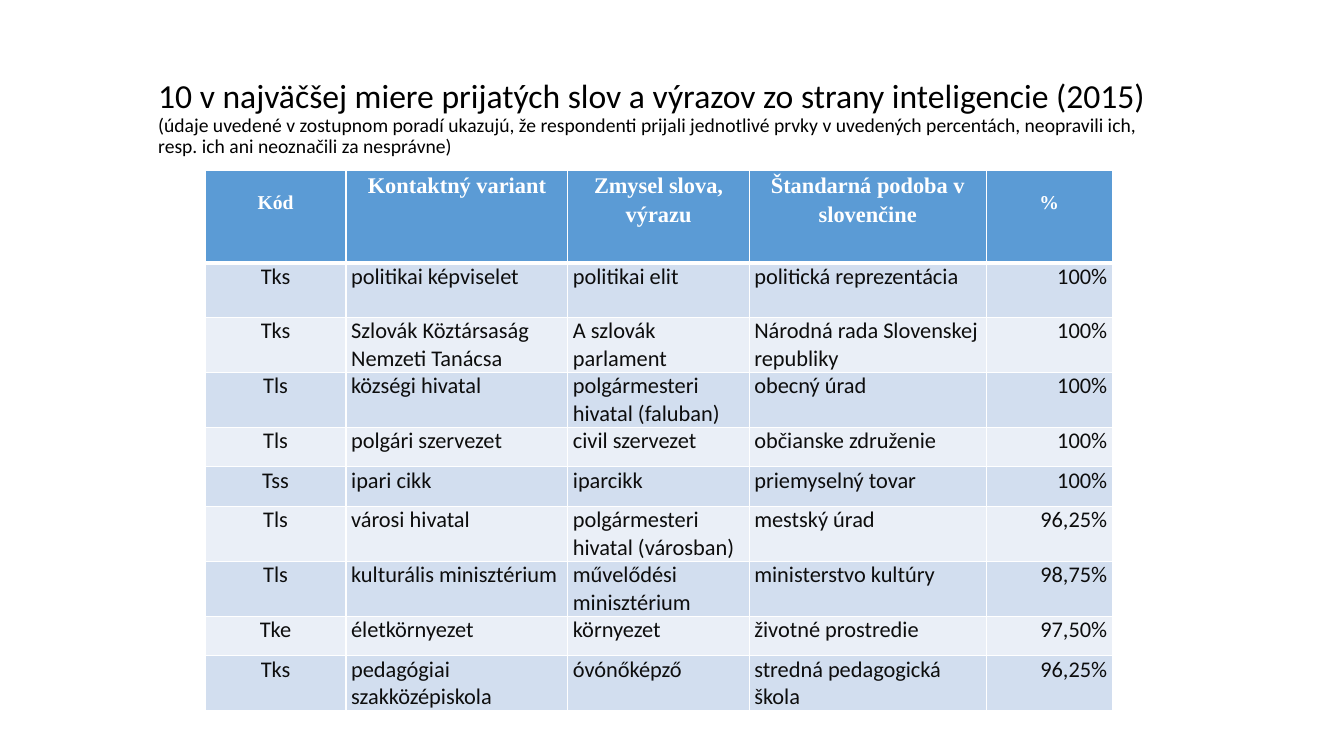
from lxml.etree import SubElement
from pptx import Presentation
from pptx.dml.color import RGBColor
from pptx.enum.text import MSO_ANCHOR, MSO_AUTO_SIZE, PP_ALIGN
from pptx.oxml.ns import qn
from pptx.util import Pt

HEADING = "10 v najväčšej miere prijatých slov a výrazov zo strany inteligencie (2015) "
EXPLANATION = (
    "(údaje uvedené v zostupnom poradí ukazujú, že respondenti prijali jednotlivé prvky "
    "v uvedených percentách, neopravili ich, \vresp. ich ani neoznačili za nesprávne)"
)
COLUMNS = [
    ("Kód", 100.8, PP_ALIGN.CENTER),
    ("Kontaktný variant", 158.4, PP_ALIGN.LEFT),
    ("Zmysel slova, výrazu", 129.6, PP_ALIGN.LEFT),
    ("Štandarná podoba v slovenčine", 169.2, PP_ALIGN.LEFT),
    ("%", 90, PP_ALIGN.RIGHT),
]
SHORT_HEADERS = ("Kód", "%")
HEADER_HEIGHT, TALL, LOW = 66.3, 39.2, 28.3
WORDS = [
    (TALL, "Tks", "politikai képviselet", "politikai elit", "politická reprezentácia", "100%"),
    (TALL, "Tks", "Szlovák Köztársaság Nemzeti Tanácsa", "A szlovák parlament",
     "Národná rada Slovenskej republiky", "100%"),
    (TALL, "Tls", "községi hivatal", "polgármesteri hivatal (faluban)", "obecný úrad", "100%"),
    (LOW, "Tls", "polgári szervezet", "civil szervezet", "občianske združenie", "100%"),
    (LOW, "Tss", "ipari cikk", "iparcikk", "priemyselný tovar", "100%"),
    (TALL, "Tls", "városi hivatal", "polgármesteri hivatal (városban)", "mestský úrad", "96,25%"),
    (TALL, "Tls", "kulturális minisztérium", "művelődési minisztérium",
     "ministerstvo kultúry", "98,75%"),
    (LOW, "Tke", "életkörnyezet", "környezet", "životné prostredie", "97,50%"),
    (TALL, "Tks", "pedagógiai szakközépiskola", "óvónőképző",
     "stredná pedagogická škola", "96,25%"),
]
HEADER_FILL, BAND_FILLS = "5B9BD5", ("D2DEEF", "EAEFF7")


def color(code):
    return RGBColor.from_string(code)


def set_font(font, name, size, code, bold=False):
    font.name, font.size, font.bold = name, Pt(size), bold
    font.color.rgb = color(code)


def add_borders(cell, bottom_width):
    properties = cell._tc.get_or_add_tcPr()
    for side, width in (("lnL", 1), ("lnR", 1), ("lnT", 1), ("lnB", bottom_width)):
        line = SubElement(properties, qn(f"a:{side}"), w=str(Pt(width)))
        SubElement(SubElement(line, qn("a:solidFill")), qn("a:srgbClr"), val="FFFFFF")


def fill_cell(cell, words, fill, align, bottom_width=1):
    add_borders(cell, bottom_width)
    cell.fill.solid()
    cell.fill.fore_color.rgb = color(fill)
    cell.margin_left = cell.margin_right = Pt(3.6)
    cell.margin_top = cell.margin_bottom = 0
    cell.text = words
    paragraph = cell.text_frame.paragraphs[0]
    paragraph.alignment = align
    return paragraph


def add_title(slide):
    title = slide.shapes.title
    title.left, title.top, title.width, title.height = Pt(105.8), Pt(48.2), Pt(730), Pt(73.4)
    frame = title.text_frame
    frame.word_wrap = True
    frame.auto_size = MSO_AUTO_SIZE.NONE
    frame.vertical_anchor = MSO_ANCHOR.MIDDLE
    paragraph = frame.paragraphs[0]
    paragraph.alignment = PP_ALIGN.LEFT
    paragraph.line_spacing = 0.9
    heading = paragraph.add_run()
    heading.text = HEADING
    set_font(heading.font, "Calibri", 24, "000000")
    paragraph.add_line_break()
    for index, line in enumerate(EXPLANATION.split("\v")):
        if index:
            paragraph.add_line_break()
        explanation = paragraph.add_run()
        explanation.text = line
        set_font(explanation.font, "Calibri", 14, "000000")


def add_words(slide):
    heights = [HEADER_HEIGHT] + [height for height, *_ in WORDS]
    width = sum(column_width for _, column_width, _ in COLUMNS)
    table = slide.shapes.add_table(
        len(heights), len(COLUMNS), Pt(146.4), Pt(121.4), Pt(width), Pt(sum(heights))
    ).table
    for row, height in zip(table.rows, heights):
        row.height = Pt(height)
    for column, (header, column_width, align) in enumerate(COLUMNS):
        table.columns[column].width = Pt(column_width)
        cell = table.cell(0, column)
        paragraph = fill_cell(cell, header, HEADER_FILL, PP_ALIGN.CENTER, 3)
        short = header in SHORT_HEADERS
        set_font(paragraph.font, "Times New Roman", 14 if short else 16, "FFFFFF", True)
        if short:
            cell.margin_top = Pt(16)
        else:
            paragraph.line_spacing = 1.15
        for row, (_, *entries) in enumerate(WORDS, 1):
            fill = BAND_FILLS[(row - 1) % 2]
            paragraph = fill_cell(table.cell(row, column), entries[column], fill, align)
            set_font(paragraph.font, "Calibri", 16, "0D0D0D")


def main():
    presentation = Presentation()
    presentation.slide_width, presentation.slide_height = Pt(960), Pt(540)
    slide = presentation.slides.add_slide(presentation.slide_layouts[5])
    add_title(slide)
    add_words(slide)
    presentation.save("out.pptx")


if __name__ == "__main__":
    main()
